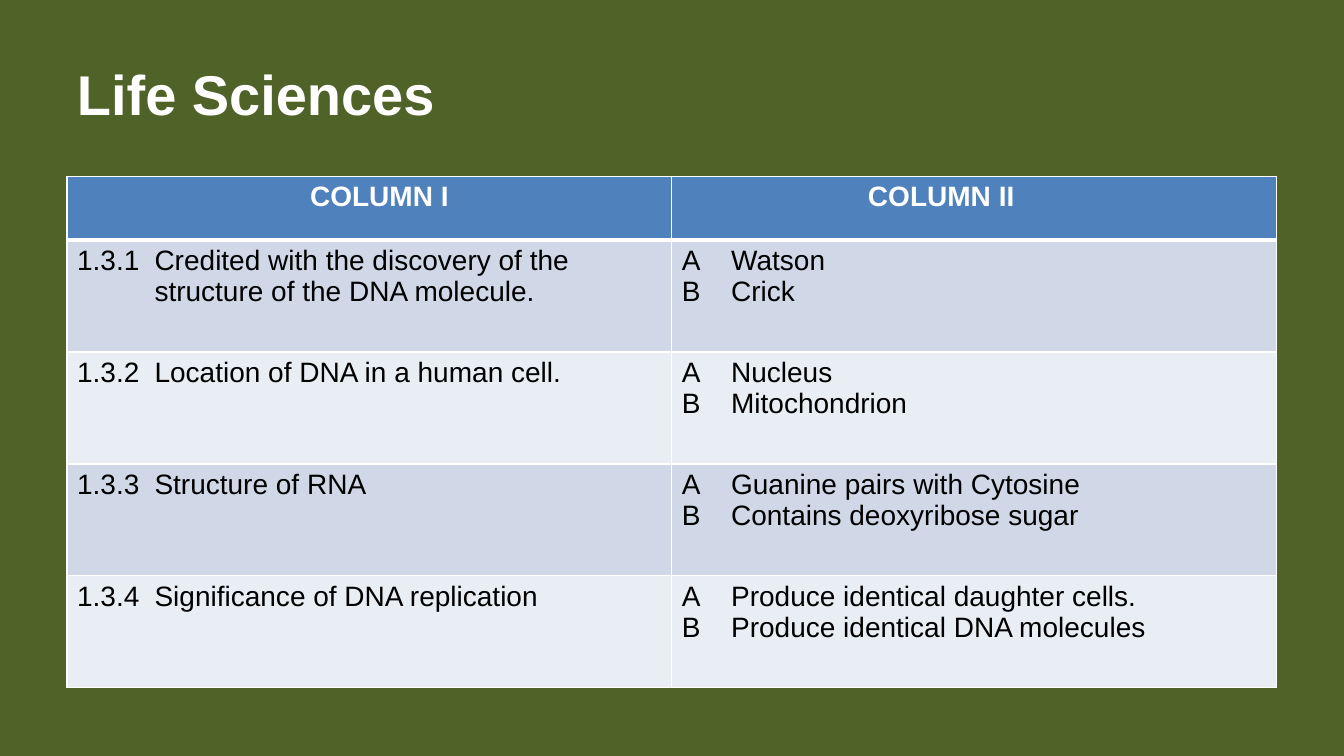
import pptx
import pptx.dml.color
import pptx.enum.text
import pptx.oxml.ns
import pptx.util
from lxml import etree

Cm, Pt = pptx.util.Cm, pptx.util.Pt
RGBColor = pptx.dml.color.RGBColor

# Content
HEADING = "Life Sciences"
COLUMN_HEADS = ["COLUMN I", "COLUMN II"]
QUESTIONS = [
    ("1.3.1", "Credited with the discovery of the structure of the DNA molecule.",
     ["Watson", "Crick"]),
    ("1.3.2", "Location of DNA in a human cell.",
     ["Nucleus", "Mitochondrion"]),
    ("1.3.3", "Structure of RNA",
     ["Guanine pairs with Cytosine", "Contains deoxyribose sugar"]),
    ("1.3.4", "Significance of DNA replication",
     ["Produce identical daughter cells.", "Produce identical DNA molecules"]),
]

# Look
FONT = "Arial"
GREEN = RGBColor(0x4F, 0x62, 0x28)
BLUE = RGBColor(0x4F, 0x81, 0xBD)
BANDS = [RGBColor(0xD0, 0xD8, 0xE8), RGBColor(0xE9, 0xED, 0xF4)]
WHITE = RGBColor(0xFF, 0xFF, 0xFF)
BLACK = RGBColor(0, 0, 0)

# Layout
LEFT, WIDTH = Cm(1.69), Cm(30.48)
HEADING_TOP, HEADING_HEIGHT = Cm(0.76), Cm(3.18)
TABLE_TOP = Cm(4.45)
HEAD_HEIGHT, QUESTION_HEIGHT = Cm(1.6), Cm(2.82)
HEAD_INDENTS = [Cm(5.87), Cm(4.69)]
NUMBER_INDENT, LETTER_INDENT = Cm(1.95), Cm(1.24)


def add_run(paragraph, text, size, color, bold=False):
    run = paragraph.add_run()
    run.text = text
    run.font.name = FONT
    run.font.size = Pt(size)
    run.font.bold = bold
    run.font.color.rgb = color


def indent(paragraph, margin, hanging=False):
    properties = paragraph._p.get_or_add_pPr()
    properties.set("marL", str(int(margin)))
    properties.set("indent", str(-int(margin) if hanging else 0))


def style_cell(cell, color, bottom=1):
    properties = cell._tc.get_or_add_tcPr()
    for side, weight in (("L", 1), ("R", 1), ("T", 1), ("B", bottom)):
        line = etree.SubElement(properties, pptx.oxml.ns.qn("a:ln" + side), w=str(int(Pt(weight))))
        paint = etree.SubElement(line, pptx.oxml.ns.qn("a:solidFill"))
        etree.SubElement(paint, pptx.oxml.ns.qn("a:srgbClr"), val=str(WHITE))
    cell.fill.solid()
    cell.fill.fore_color.rgb = color


def write_items(cell, items, margin):
    """Write each label and its text on a hanging indent."""
    frame = cell.text_frame
    for number, (label, text) in enumerate(items):
        paragraph = frame.add_paragraph() if number else frame.paragraphs[0]
        indent(paragraph, margin, hanging=True)
        add_run(paragraph, label + "\t" + text, 20, BLACK)


def main():
    deck = pptx.Presentation()
    deck.slide_width, deck.slide_height = Cm(33.87), Cm(19.05)
    slide = deck.slides.add_slide(deck.slide_layouts[6])
    slide.background.fill.solid()
    slide.background.fill.fore_color.rgb = GREEN

    # Heading
    heading = slide.shapes.add_textbox(LEFT, HEADING_TOP, WIDTH, HEADING_HEIGHT).text_frame
    heading.word_wrap = True
    heading.vertical_anchor = pptx.enum.text.MSO_ANCHOR.MIDDLE
    add_run(heading.paragraphs[0], HEADING, 40, WHITE, bold=True)

    # Table grid
    height = HEAD_HEIGHT + QUESTION_HEIGHT * len(QUESTIONS)
    matching = slide.shapes.add_table(
        len(QUESTIONS) + 1, len(COLUMN_HEADS), LEFT, TABLE_TOP, WIDTH, height).table
    for number, row in enumerate(matching.rows):
        row.height = QUESTION_HEIGHT if number else HEAD_HEIGHT

    # Column heads
    for column, (head, margin) in enumerate(zip(COLUMN_HEADS, HEAD_INDENTS)):
        cell = matching.cell(0, column)
        style_cell(cell, BLUE, bottom=3)
        paragraph = cell.text_frame.paragraphs[0]
        indent(paragraph, margin)
        add_run(paragraph, head, 20, WHITE, bold=True)

    # Questions and their options
    for row, (number, question, options) in enumerate(QUESTIONS, start=1):
        question_cell, option_cell = matching.cell(row, 0), matching.cell(row, 1)
        for cell in (question_cell, option_cell):
            style_cell(cell, BANDS[(row - 1) % 2])
        write_items(question_cell, [(number, question)], NUMBER_INDENT)
        write_items(option_cell, zip("AB", options), LETTER_INDENT)

    # The line under the heads is shared with the first question row
    for column in range(len(COLUMN_HEADS)):
        top = matching.cell(1, column)._tc.tcPr.find(pptx.oxml.ns.qn("a:lnT"))
        top.set("w", str(int(Pt(3))))

    deck.save("out.pptx")


if __name__ == "__main__":
    main()
